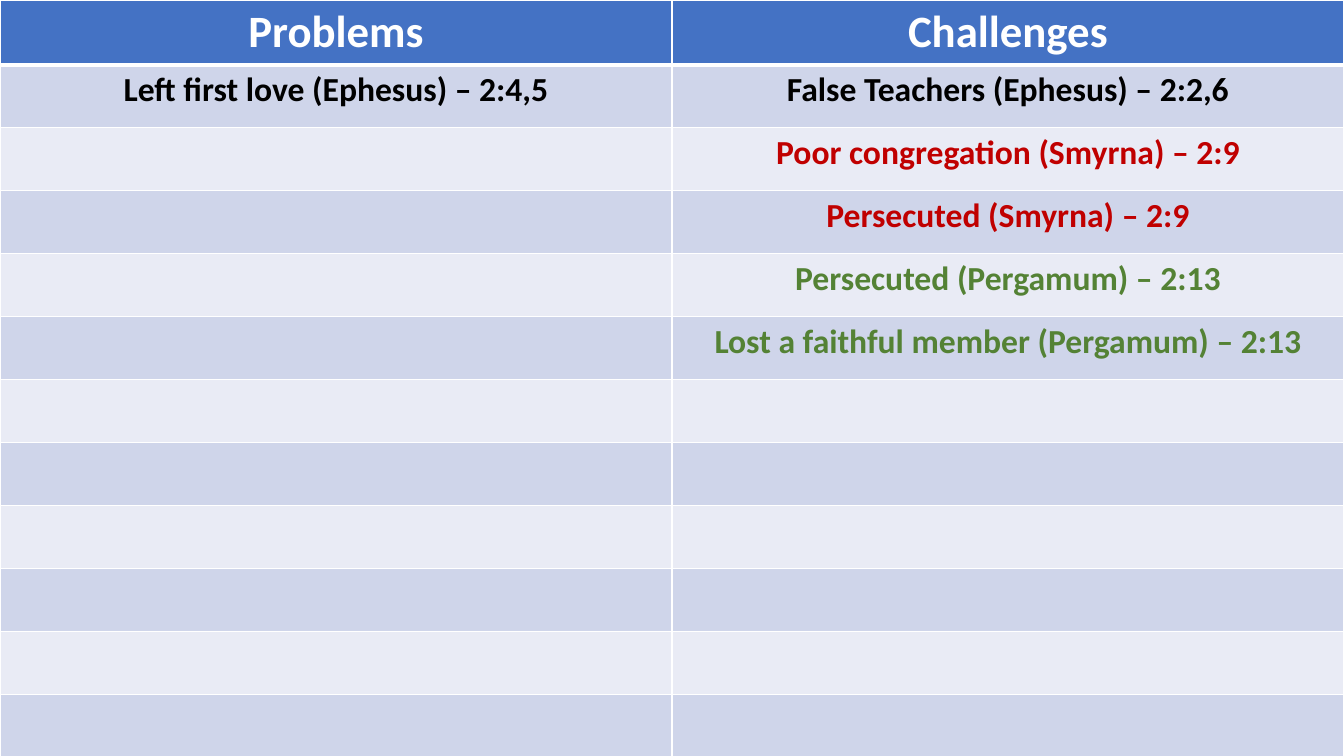
import pptx
import pptx.dml.color
import pptx.enum.text
import pptx.oxml
import pptx.oxml.ns
import pptx.util
from pptx.util import Inches

WHITE, BLACK, RED, GREEN = "FFFFFF", "000000", "C00000", "548235"
HEADER_FILL = "4472C4"
BAND_FILLS = ["E9EBF5", "CFD5EA"]
ROW_COUNT = 12
SLIDE_WIDTH, SLIDE_HEIGHT = Inches(13.33), Inches(7.5)

HEADINGS = ["Problems", "Challenges"]
PROBLEMS = [("Left first love (Ephesus) – 2:4,5", BLACK)]
CHALLENGES = [
    ("False Teachers (Ephesus) – 2:2,6", BLACK),
    ("Poor congregation (Smyrna) – 2:9", RED),
    ("Persecuted (Smyrna) – 2:9", RED),
    ("Persecuted (Pergamum) – 2:13", GREEN),
    ("Lost a faithful member (Pergamum) – 2:13", GREEN),
]


def rgb(color):
    return pptx.dml.color.RGBColor.from_string(color)


def add_borders(cell, widths):
    properties = cell._tc.get_or_add_tcPr()
    for side, width in widths.items():
        properties.append(pptx.oxml.parse_xml(
            f'<a:ln{side} {pptx.oxml.ns.nsdecls("a")} w="{pptx.util.Pt(width)}">'
            f'<a:solidFill><a:srgbClr val="{WHITE}"/></a:solidFill></a:ln{side}>'))


def fill_cell(cell, color):
    cell.fill.solid()
    cell.fill.fore_color.rgb = rgb(color)


def write_cell(cell, text, size, color):
    paragraph = cell.text_frame.paragraphs[0]
    paragraph.alignment = pptx.enum.text.PP_ALIGN.CENTER
    run = paragraph.add_run()
    run.text = text
    font_format = {"name": "Calibri", "size": pptx.util.Pt(size), "bold": True}
    for attribute, value in font_format.items():
        setattr(run.font, attribute, value)
    run.font.color.rgb = rgb(color)


def add_church_table(slide):
    table = slide.shapes.add_table(
        ROW_COUNT, len(HEADINGS), 0, 0, SLIDE_WIDTH, SLIDE_HEIGHT).table
    for row in range(ROW_COUNT):
        for column in range(len(HEADINGS)):
            cell = table.cell(row, column)
            add_borders(cell, {"L": 1, "R": 1, "T": 3 if row == 1 else 1,
                               "B": 3 if row == 0 else 1})
            fill_cell(cell, BAND_FILLS[row % 2] if row else HEADER_FILL)
    for column, entries in enumerate([PROBLEMS, CHALLENGES]):
        write_cell(table.cell(0, column), HEADINGS[column], 32, WHITE)
        for row, (text, color) in enumerate(entries, 1):
            write_cell(table.cell(row, column), text, 24, color)


def main():
    presentation = pptx.Presentation()
    presentation.slide_width = SLIDE_WIDTH
    presentation.slide_height = SLIDE_HEIGHT
    slide = presentation.slides.add_slide(presentation.slide_layouts[6])
    add_church_table(slide)
    presentation.save("out.pptx")


if __name__ == "__main__":
    main()
